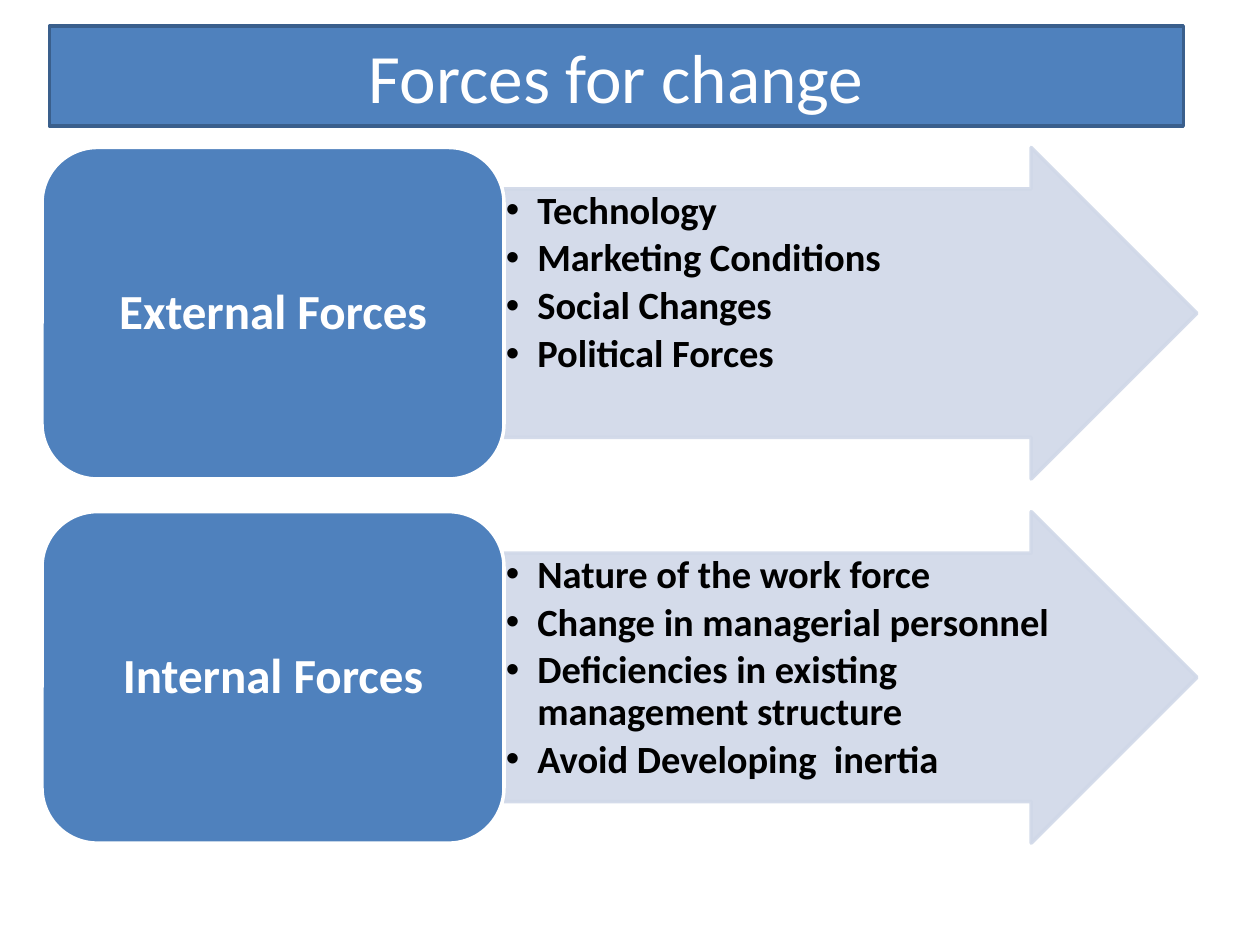
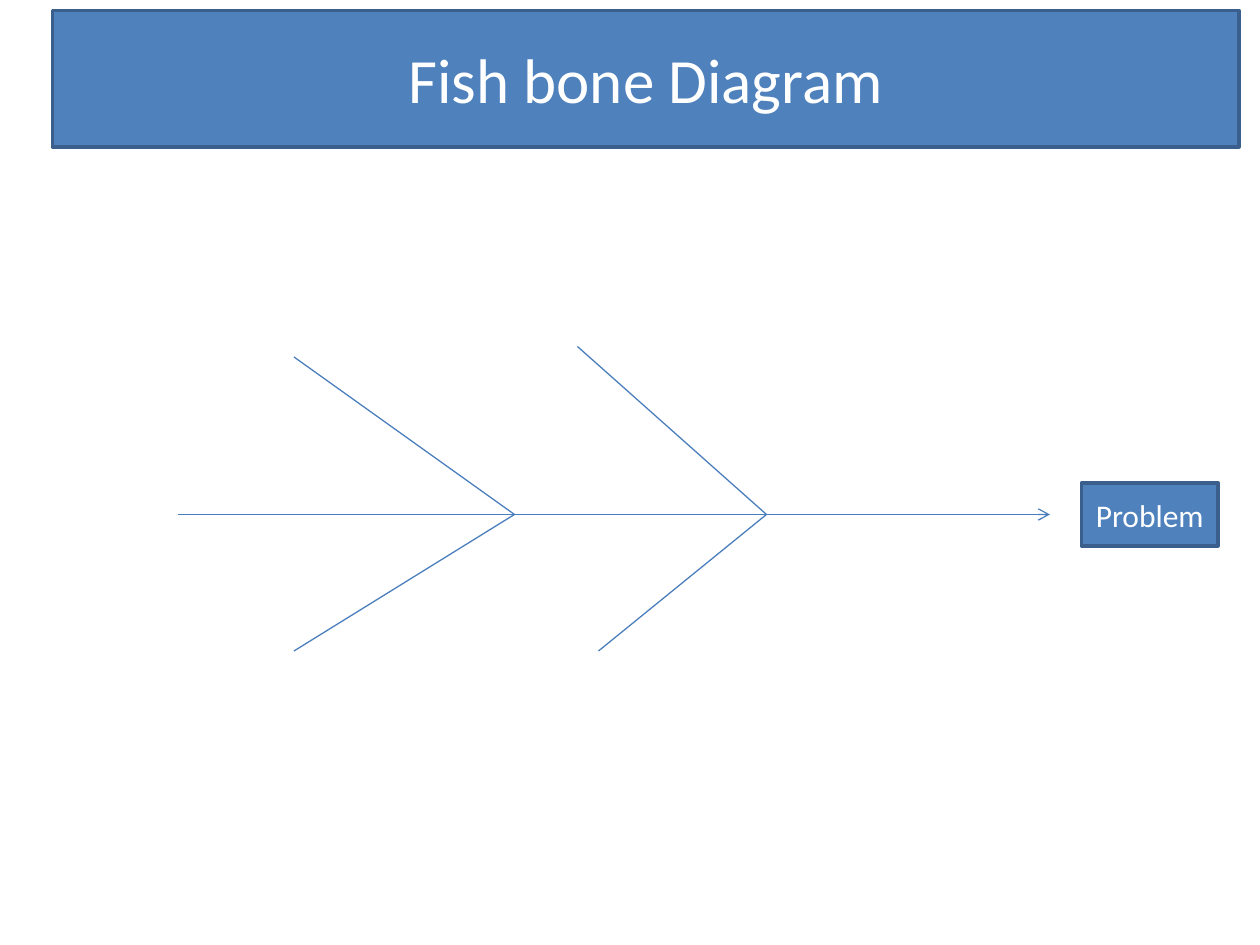
"""Build two slides on forces for change and the fish bone diagram."""
from dataclasses import dataclass
from typing import Optional

from lxml.etree import SubElement
from pptx import Presentation
from pptx.dml.color import RGBColor
from pptx.enum.shapes import MSO_CONNECTOR as Link, MSO_SHAPE as Kind
from pptx.enum.text import MSO_ANCHOR as Anchor, MSO_AUTO_SIZE as Fit, PP_ALIGN as Align
from pptx.oxml.ns import qn
from pptx.util import Pt

FONT = "Calibri"
WHITE = RGBColor(0xFF, 0xFF, 0xFF)
BLACK = RGBColor(0, 0, 0)
BLUE = RGBColor(0x4F, 0x81, 0xBD)
NAVY = RGBColor(0x3A, 0x5F, 0x8C)
PALE = RGBColor(0xD0, 0xD8, 0xE8)
BONE = RGBColor(0x4B, 0x7E, 0xBC)

CARD_LEFT, CARD_WIDTH = 24, 264
ROW_TOP, ROW_HEIGHT, ROW_STEP = 84.3, 189.4, 208.1
ARROW_WIDTH = 396
SPINE_Y = 294


@dataclass(frozen=True)
class Box:
    left: float
    top: float
    width: float
    height: float

    def sides(self) -> list:
        return [Pt(n) for n in (self.left, self.top, self.width, self.height)]


@dataclass(frozen=True)
class Force:
    name: str
    points: tuple


@dataclass(frozen=True)
class Bone:
    start: tuple
    end: tuple
    arrow: bool = False


FORCES = (
    Force("External Forces", (
        "Technology", "Marketing Conditions", "Social Changes", "Political Forces")),
    Force("Internal Forces", (
        "Nature of the work force", "Change in managerial personnel",
        "Deficiencies in existing management structure", "Avoid Developing  inertia")),
)
JOINTS = {
    294: ((168, 204), (168, 372)),
    438: ((330, 198), (342, 372)),
}
BONES = [Bone((102, SPINE_Y), (600, SPINE_Y), arrow=True)] + [
    Bone(tip, (joint, SPINE_Y)) for joint, tips in JOINTS.items() for tip in tips]


def write(shape, *lines: str, size: float, color: RGBColor = WHITE, bold: bool = False,
          align=Align.CENTER, anchor=Anchor.MIDDLE, inset: tuple = (7.2, 3.6),
          spacing: float = 1, after: float = 0, bullet: Optional[str] = None) -> None:
    frame = shape.text_frame
    frame.auto_size, frame.word_wrap = Fit.NONE, True
    frame.vertical_anchor = anchor
    frame.margin_left = frame.margin_right = Pt(inset[0])
    frame.margin_top = frame.margin_bottom = Pt(inset[1])
    frame.text = "\n".join(lines)
    for para in frame.paragraphs:
        para.alignment, para.line_spacing = align, spacing
        para.space_before, para.space_after = Pt(0), Pt(after)
        font = para.runs[0].font
        font.name, font.size, font.bold = FONT, Pt(size), bold
        font.color.rgb = color
        if bullet:
            props = para._p.get_or_add_pPr()
            props.set("marL", str(Pt(18)))
            props.set("indent", str(Pt(-18)))
            SubElement(props, qn("a:buFont"), typeface="Arial")
            SubElement(props, qn("a:buChar"), char=bullet)


def paint(shape, fill: RGBColor, line: RGBColor, alpha: Optional[int] = None) -> None:
    shape.fill.solid()
    shape.fill.fore_color.rgb = fill
    shape.line.color.rgb = line
    shape.line.width = Pt(2)
    if alpha:
        for tint in shape._element.spPr.iter(qn("a:srgbClr")):
            SubElement(tint, qn("a:alpha"), val=str(alpha * 1000))


def add_box(slide, kind, box: Box, fill: RGBColor, line: RGBColor,
            alpha: Optional[int] = None):
    shape = slide.shapes.add_shape(kind, *box.sides())
    shape.shadow.inherit = False
    paint(shape, fill, line, alpha)
    return shape


def add_page(deck, title: str, box: Box, size: float):
    slide = deck.slides.add_slide(deck.slide_layouts[5])
    head = slide.shapes.title
    head.left, head.top, head.width, head.height = box.sides()
    paint(head, BLUE, NAVY)
    write(head, title, size=size)
    return slide


def add_force(slide, force: Force, top: float) -> None:
    arrow = add_box(slide, Kind.RIGHT_ARROW,
                    Box(CARD_LEFT + CARD_WIDTH, top, ARROW_WIDTH, ROW_HEIGHT),
                    PALE, PALE, alpha=90)
    arrow.adjustments[0], arrow.adjustments[1] = 0.75, 0.5
    write(arrow, *force.points, size=22, color=BLACK, bold=True, align=Align.LEFT,
          anchor=Anchor.TOP, inset=(1.1, 1.1), spacing=0.9, after=3.6, bullet="•")
    card = add_box(slide, Kind.ROUNDED_RECTANGLE,
                   Box(CARD_LEFT, top, CARD_WIDTH, ROW_HEIGHT), BLUE, WHITE)
    write(card, force.name, size=28, bold=True, inset=(8.4, 4.2), spacing=0.9)


def add_bone(slide, bone: Bone) -> None:
    ends = [Pt(n) for n in bone.start + bone.end]
    link = slide.shapes.add_connector(Link.STRAIGHT, *ends)
    link.line.color.rgb = BONE
    link.line.width = Pt(0.75)
    if bone.arrow:
        SubElement(link.line._get_or_add_ln(), qn("a:tailEnd"), type="arrow")
    SubElement(link._element.spPr, qn("a:effectLst"))


def main() -> None:
    deck = Presentation()
    deck.slide_width, deck.slide_height = Pt(720), Pt(540)

    slide = add_page(deck, "Forces for change", Box(28.2, 15, 648, 57), 39.6)
    for row, force in enumerate(FORCES):
        add_force(slide, force, ROW_TOP + row * ROW_STEP)

    slide = add_page(deck, "Fish bone Diagram", Box(30, 6, 678, 78), 36)
    for bone in BONES:
        add_bone(slide, bone)
    goal = add_box(slide, Kind.RECTANGLE, Box(618, 276, 78, 36), BLUE, NAVY)
    write(goal, "Problem", size=18)

    deck.save("out.pptx")


if __name__ == "__main__":
    main()
